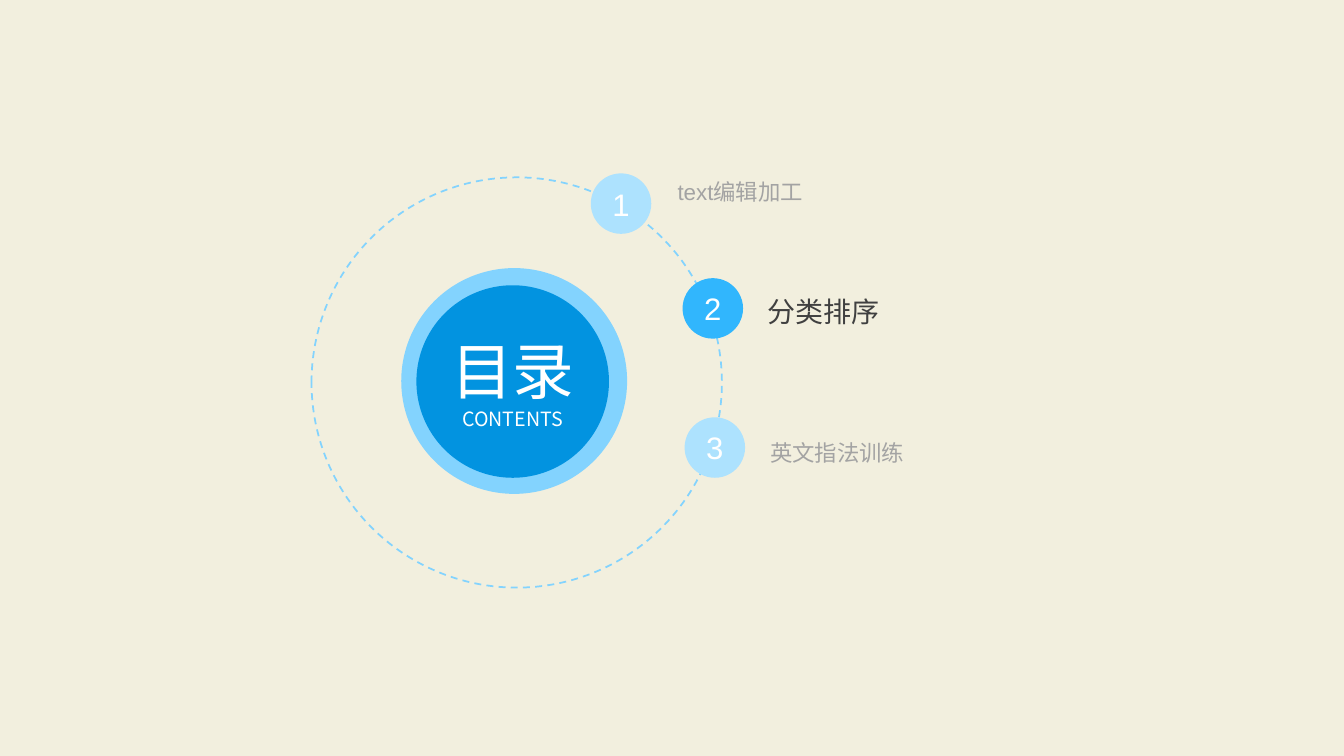
from dataclasses import dataclass

from lxml import etree
from pptx import Presentation
from pptx import util as u
from pptx.dml import color as col
from pptx.enum import dml, shapes, text
from pptx.oxml import ns

SANS = "Noto Sans CJK SC"
SKY = "83D3FE"
WHITE = "FFFFFF"
DOT = 0.6


@dataclass
class Item:
    label: str
    dot: tuple[float, float]
    spot: tuple[float, float]
    width: float
    fill: str = "ADE2FE"
    color: str = "A3A3A3"
    size: float = 16


ITEMS = [
    Item("text编辑加工", (5.86, 1.72), (6.68, 1.45), 3.91),
    Item("分类排序", (6.77, 2.76), (7.57, 2.64), 3.26, "31B6FD", "404040", 20),
    Item("英文指法训练", (6.79, 4.14), (7.6, 4.04), 3.3),
]


def rgb(code: str) -> col.RGBColor:
    return col.RGBColor.from_string(code)


def write(shape, *lines: tuple[str, float], font: str = "Arial", color: str = WHITE,
          align=text.PP_ALIGN.CENTER, left: float = 0, space: float = 1) -> None:
    frame = shape.text_frame
    frame.word_wrap = True
    frame.vertical_anchor = text.MSO_ANCHOR.MIDDLE
    frame.margin_left = u.Inches(left)
    frame.margin_top = frame.margin_right = frame.margin_bottom = 0
    for i, (words, size) in enumerate(lines):
        para = frame.paragraphs[0] if i == 0 else frame.add_paragraph()
        para.alignment = align
        para.line_spacing = space
        run = para.add_run()
        run.text = words
        run.font.size = u.Pt(size)
        run.font.name = font
        run.font.color.rgb = rgb(color)
        east = etree.SubElement(run.font._element, ns.qn("a:ea"))
        east.set("typeface", SANS)


def disc(slide, left: float, top: float, size: float, fill: str = "", line: str = ""):
    shape = slide.shapes.add_shape(
        shapes.MSO_SHAPE.OVAL, *map(u.Inches, (left, top, size, size)))
    shape.shadow.inherit = False
    if fill:
        shape.fill.solid()
        shape.fill.fore_color.rgb = rgb(fill)
    else:
        shape.fill.background()
    if line:
        shape.line.color.rgb = rgb(line)
        shape.line.width = u.Pt(1.25)
        shape.line.dash_style = dml.MSO_LINE.DASH
    else:
        shape.line.fill.background()
    return shape


def entry(slide, item: Item) -> None:
    box = slide.shapes.add_textbox(*map(u.Inches, (*item.spot, item.width, 0.84)))
    write(box, (item.label, item.size), color=item.color,
          align=text.PP_ALIGN.LEFT, left=0.04, space=1.2)


def main() -> None:
    deck = Presentation()
    deck.slide_width, deck.slide_height = u.Inches(13.33), u.Inches(7.5)
    slide = deck.slides.add_slide(deck.slide_layouts[6])
    slide.background.fill.solid()
    slide.background.fill.fore_color.rgb = rgb("F2EFDE")

    disc(slide, 3.98, 2.66, 2.24, fill=SKY)
    disc(slide, 3.09, 1.76, 4.07, line=SKY)
    core = disc(slide, 4.13, 2.83, 1.91, fill="0293E0")
    write(core, ("目录", 44), ("CONTENTS", 14), font=SANS)

    for item in ITEMS:
        entry(slide, item)
    for i, item in enumerate(ITEMS, 1):
        write(disc(slide, *item.dot, DOT, fill=item.fill), (str(i), 22.2))

    deck.save("out.pptx")


if __name__ == "__main__":
    main()
